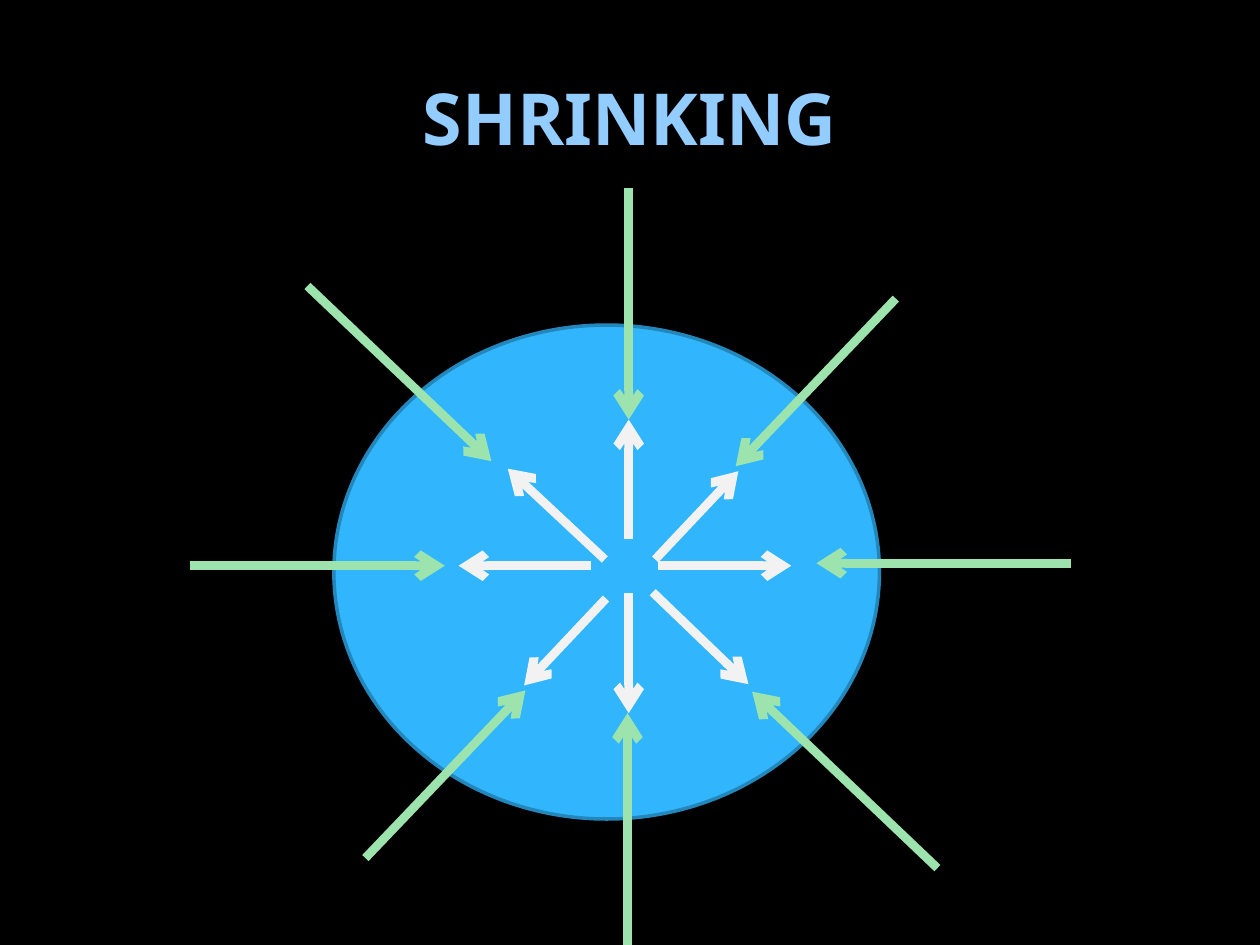
from lxml import etree
from pptx import Presentation
from pptx.dml.color import RGBColor
from pptx.enum import shapes, text
from pptx.oxml import ns
from pptx.util import Inches, Pt

BLACK = RGBColor(0x00, 0x00, 0x00)
PALE_BLUE = RGBColor(0x93, 0xCD, 0xFF)
BLUE = RGBColor(0x31, 0xB6, 0xFD)
DARK_BLUE = RGBColor(0x24, 0x87, 0xBB)
OFF_WHITE = RGBColor(0xF2, 0xF2, 0xF2)
GREEN = RGBColor(0x9D, 0xE3, 0xAE)

COLUMNS, ROWS = 100, 75

# Start column and row, then tip column and row.
OUTWARD = [
    (49.9, 42.8, 49.9, 33.3),
    (46.9, 44.9, 36.4, 44.9),
    (52.2, 44.9, 62.8, 44.9),
    (49.9, 47.1, 49.9, 56.6),
    (52.0, 44.4, 58.6, 37.4),
    (48.0, 44.4, 40.3, 37.2),
    (51.8, 47.0, 59.4, 54.3),
    (48.1, 47.5, 41.6, 54.4),
]
INWARD = [
    (15.1, 44.9, 35.3, 44.9),
    (85.0, 44.7, 64.8, 44.7),
    (49.9, 14.9, 49.9, 33.3),
    (49.8, 75.0, 49.8, 56.6),
    (24.4, 22.7, 39.0, 36.6),
    (74.4, 68.9, 59.7, 54.9),
    (71.1, 23.7, 58.4, 37.0),
    (29.0, 68.1, 41.7, 54.8),
]


class Slide:
    """Places elements by columns and rows of the slide grid."""

    font = "Noto Sans"
    title_size = Pt(41)
    arrow_width = Pt(5)
    outline_width = Pt(2)

    def __init__(self, deck):
        self.deck = deck
        self.page = deck.slides.add_slide(deck.slide_layouts[5])
        fill = self.page.background.fill
        fill.solid()
        fill.fore_color.rgb = BLACK
        self.group = self.page.shapes.add_group_shape()

    def x(self, columns):
        return round(self.deck.slide_width * columns / COLUMNS)

    def y(self, rows):
        return round(self.deck.slide_height * rows / ROWS)

    def title(self, words, left, top, width, height):
        box = self.page.shapes.title
        box.left, box.top = self.x(left), self.y(top)
        box.width, box.height = self.x(width), self.y(height)
        box.text_frame.vertical_anchor = text.MSO_ANCHOR.MIDDLE
        para = box.text_frame.paragraphs[0]
        para.alignment = text.PP_ALIGN.CENTER
        span = para.add_run()
        span.text = words
        span.font.name = self.font
        span.font.size = self.title_size
        span.font.bold = True
        span.font.color.rgb = PALE_BLUE

    def ellipse(self, left, top, width, height):
        ball = self.group.shapes.add_shape(
            shapes.MSO_SHAPE.OVAL,
            self.x(left), self.y(top), self.x(width), self.y(height))
        ball.shadow.inherit = False
        ball.fill.solid()
        ball.fill.fore_color.rgb = BLUE
        ball.line.color.rgb = DARK_BLUE
        ball.line.width = self.outline_width

    def arrow(self, start_column, start_row, tip_column, tip_row, color):
        arrow = self.group.shapes.add_connector(
            shapes.MSO_CONNECTOR.STRAIGHT,
            self.x(start_column), self.y(start_row),
            self.x(tip_column), self.y(tip_row))
        arrow.line.color.rgb = color
        arrow.line.width = self.arrow_width
        properties = arrow.element.spPr
        etree.SubElement(properties.find(ns.qn("a:ln")),
                         ns.qn("a:tailEnd"), type="arrow")
        etree.SubElement(properties, ns.qn("a:effectLst"))


def main():
    deck = Presentation()
    deck.slide_width, deck.slide_height = Inches(10), Inches(7.5)
    slide = Slide(deck)
    slide.title("SHRINKING", 5, 3, 90, 12.5)
    slide.ellipse(26.5, 25.8, 43.3, 39.2)
    for arrows, color in ((OUTWARD, OFF_WHITE), (INWARD, GREEN)):
        for ends in arrows:
            slide.arrow(*ends, color)
    deck.save("out.pptx")


if __name__ == "__main__":
    main()
